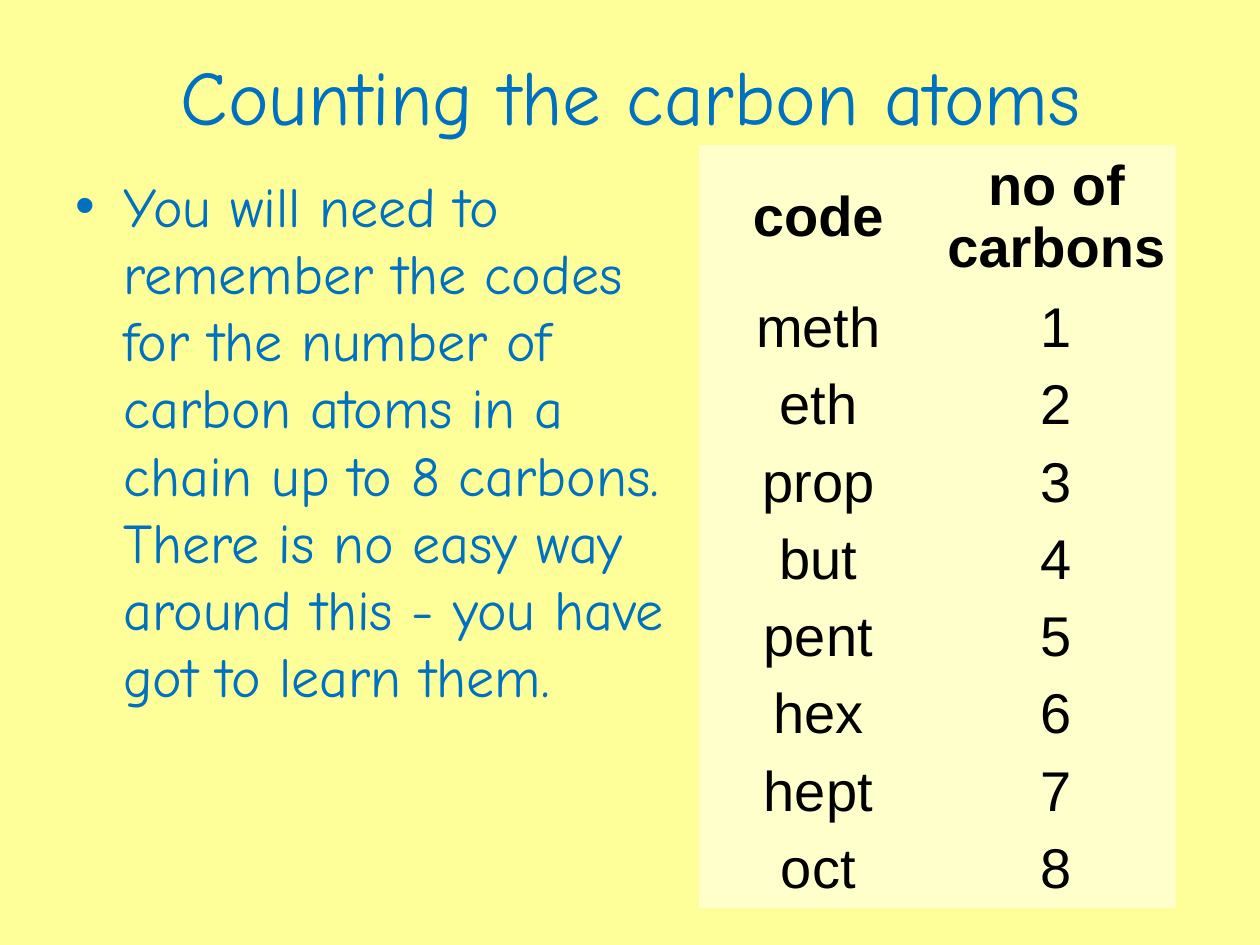
"""Build a slide that lists the naming codes for carbon chains of one to eight atoms."""
from dataclasses import dataclass

from lxml import etree
from pptx import Presentation
from pptx.dml.color import RGBColor
from pptx.enum.text import MSO_ANCHOR, PP_ALIGN
from pptx.oxml.ns import qn
from pptx.slide import Slide
from pptx.text.text import _Paragraph as Paragraph
from pptx.util import Inches, Pt

CENTER = PP_ALIGN.CENTER
LEFT = PP_ALIGN.LEFT
TOP = MSO_ANCHOR.TOP
MIDDLE = MSO_ANCHOR.MIDDLE

YELLOW = RGBColor(0xFF, 0xFF, 0x99)
CREAM = RGBColor(0xFF, 0xFF, 0xCC)
BLUE = RGBColor(0x00, 0x70, 0xC0)
BLACK = RGBColor(0x00, 0x00, 0x00)

TEXT_FONT = "Comic Neue"
TABLE_FONT = "Arial"
PLAIN_TABLE_STYLE = "{2D5ABB26-0587-4C30-8999-92F81FD0307C}"

HEADINGS = ("code", "no of carbons")
CODES = ("meth", "eth", "prop", "but", "pent", "hex", "hept", "oct")
ADVICE = (
    "You will need to remember the codes for the number of carbon atoms "
    "in a chain up to 8 carbons. There is no easy way around this - "
    "you have got to learn them."
)


@dataclass(frozen=True)
class Area:
    left: float
    top: float
    width: float
    height: float

    def lengths(self) -> tuple[Inches, ...]:
        return tuple(Inches(n) for n in (self.left, self.top, self.width, self.height))


@dataclass(frozen=True)
class TextStyle:
    size: float
    font: str
    color: RGBColor
    align: PP_ALIGN
    bold: bool = False


TITLE_STYLE = TextStyle(44, TEXT_FONT, BLUE, CENTER)
ADVICE_STYLE = TextStyle(32, TEXT_FONT, BLUE, LEFT)
HEADING_STYLE = TextStyle(32, TABLE_FONT, BLACK, CENTER, bold=True)
CELL_STYLE = TextStyle(32, TABLE_FONT, BLACK, CENTER)


def write(para: Paragraph, text: str, style: TextStyle) -> None:
    para.text = text
    para.alignment = style.align
    for span in para.runs:
        span.font.size = Pt(style.size)
        span.font.name = style.font
        span.font.bold = style.bold
        span.font.color.rgb = style.color


def add_text(page: Slide, area: Area, text: str, style: TextStyle, anchor: MSO_ANCHOR) -> Paragraph:
    frame = page.shapes.add_textbox(*area.lengths()).text_frame
    frame.word_wrap = True
    frame.vertical_anchor = anchor
    para = frame.paragraphs[0]
    write(para, text, style)
    return para


def add_bullet(para: Paragraph, indent: Inches) -> None:
    properties = para._p.get_or_add_pPr()
    properties.set("marL", str(indent))
    properties.set("indent", str(-indent))
    etree.SubElement(properties, qn("a:buFont"), typeface=TABLE_FONT)
    etree.SubElement(properties, qn("a:buChar"), char="•")


def add_code_table(page: Slide, area: Area) -> None:
    rows = [HEADINGS, *((code, str(count)) for count, code in enumerate(CODES, 1))]
    shape = page.shapes.add_table(len(rows), len(HEADINGS), *area.lengths())
    table = shape.table
    table.first_row = False
    table.horz_banding = False
    table._tbl.tblPr.find(qn("a:tableStyleId")).text = PLAIN_TABLE_STYLE
    for row_index, (row, texts) in enumerate(zip(table.rows, rows)):
        row.height = Inches(0.3)
        style = CELL_STYLE if row_index else HEADING_STYLE
        for cell, text in zip(row.cells, texts):
            cell.fill.solid()
            cell.fill.fore_color.rgb = CREAM
            cell.vertical_anchor = MIDDLE
            cell.margin_left = cell.margin_right = Inches(0.04)
            cell.margin_top = cell.margin_bottom = Inches(0.04)
            write(cell.text_frame.paragraphs[0], text, style)
    shape.height = Inches(area.height)


def main() -> None:
    deck = Presentation()
    deck.slide_width = Inches(10)
    deck.slide_height = Inches(7.5)
    page = deck.slides.add_slide(deck.slide_layouts[6])
    page.background.fill.solid()
    page.background.fill.fore_color.rgb = YELLOW

    add_text(page, Area(0.51, 0.13, 9, 1.25), "Counting the carbon atoms", TITLE_STYLE, MIDDLE)
    advice = add_text(page, Area(0.5, 1.31, 4.97, 5.91), ADVICE, ADVICE_STYLE, TOP)
    advice.space_before = Pt(6.4)
    add_bullet(advice, Inches(0.38))
    add_code_table(page, Area(5.55, 1.15, 3.78, 6.08))
    deck.save("out.pptx")


if __name__ == "__main__":
    main()
